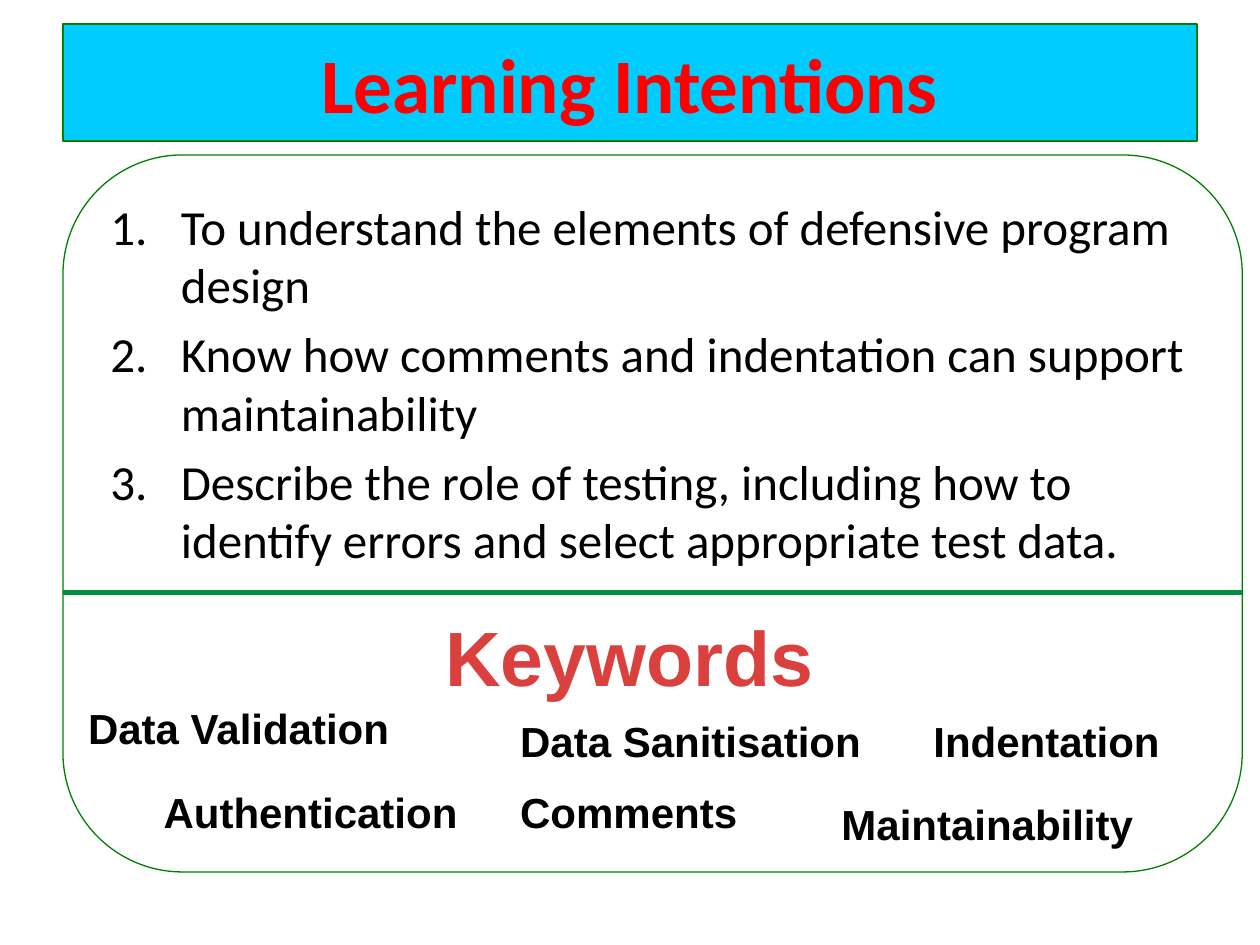
from pptx import Presentation
from pptx import util as u
from pptx.dml.color import RGBColor
from pptx.enum import shapes, text
from pptx.oxml.ns import qn
from lxml import etree

# Content
TITLE = "Learning Intentions"
INTENTIONS = [
    "To understand the elements of defensive program design",
    "Know how comments and indentation can support maintainability",
    "Describe the role of testing, including how to identify errors and select appropriate test data.",
]
HEADING = "Keywords"
KEYWORDS = [  # word, left, top, width
    ("Data Validation", 0.6, 5.53, 2.61),
    ("Data Sanitisation", 4.03, 5.63, 2.93),
    ("Authentication", 1.2, 6.19, 2.56),
    ("Maintainability", 6.58, 6.29, 2.63),
    ("Comments", 4.03, 6.19, 1.94),
    ("Indentation", 7.31, 5.63, 2.01),
]
COLOURS = {"banner": "00CCFF", "title": "FF0000", "outline": "008000",
           "divider": "008E40", "heading": "DA413E", "text": "000000"}
LEFT, PANEL_WIDTH, DIVIDER_Y = 0.5, 9.36, 4.7


def colour(name):
    return RGBColor.from_string(COLOURS[name])


def style(paragraph, name, size, ink, bold=False):
    font = paragraph.font
    font.name, font.size, font.bold = name, u.Pt(size), bold
    font.color.rgb = colour(ink)


def outline(shape, name, width):
    shape.line.color.rgb = colour(name)
    shape.line.width = u.Pt(width)


def number(paragraph, indent):
    properties = paragraph._p.get_or_add_pPr()
    properties.set("marL", str(u.Inches(indent)))
    properties.set("indent", str(u.Inches(-indent)))
    etree.SubElement(properties, qn("a:buFont"), typeface="+mj-lt")
    etree.SubElement(properties, qn("a:buAutoNum"), type="arabicPeriod")


def add_label(slide, words, left, top, width, height, size, ink):
    box = slide.shapes.add_textbox(*map(u.Inches, (left, top, width, height)))
    box.text_frame.word_wrap = False
    paragraph = box.text_frame.paragraphs[0]
    paragraph.text = words
    style(paragraph, "Arial", size, ink, bold=True)
    return paragraph


presentation = Presentation()
presentation.slide_width, presentation.slide_height = u.Inches(10), u.Inches(7.5)
slide = presentation.slides.add_slide(presentation.slide_layouts[5])

# Title banner
title = slide.shapes.title
title.left, title.top, title.width, title.height = map(u.Inches, (LEFT, 0.19, 9, 0.93))
title.fill.solid()
title.fill.fore_color.rgb = colour("banner")
outline(title, "outline", 0.75)
title.text_frame.text = TITLE
title.text_frame.vertical_anchor = text.MSO_ANCHOR.MIDDLE
title.text_frame.paragraphs[0].alignment = text.PP_ALIGN.CENTER
style(title.text_frame.paragraphs[0], "Calibri", 44, "title", bold=True)

# Rounded panel with the numbered intentions
panel = slide.shapes.add_shape(shapes.MSO_SHAPE.ROUNDED_RECTANGLE,
                               *map(u.Inches, (LEFT, 1.23, PANEL_WIDTH, 5.69)))
panel.shadow.inherit = False
panel.fill.background()
outline(panel, "outline", 0.75)
frame = panel.text_frame
frame.word_wrap = True
frame.vertical_anchor = text.MSO_ANCHOR.TOP
frame.text = "\n".join(INTENTIONS)
for index, paragraph in enumerate(frame.paragraphs):
    number(paragraph, 0.56)
    paragraph.alignment = text.PP_ALIGN.LEFT
    if index:
        paragraph.space_before = u.Pt(5.6)
    style(paragraph, "Calibri", 28, "text")

# Divider
divider = slide.shapes.add_connector(
    shapes.MSO_CONNECTOR.STRAIGHT,
    *map(u.Inches, (LEFT, DIVIDER_Y, LEFT + PANEL_WIDTH, DIVIDER_Y)))
outline(divider, "divider", 3)
etree.SubElement(divider._element.spPr, qn("a:effectLst"))

# Keywords
heading = add_label(slide, HEADING, 3.42, 4.79, 3.15, 0.84, 44, "heading")
heading.alignment = text.PP_ALIGN.CENTER
for word, left, top, width in KEYWORDS:
    add_label(slide, word, left, top, width, 0.5, 24, "text")

presentation.save("out.pptx")
